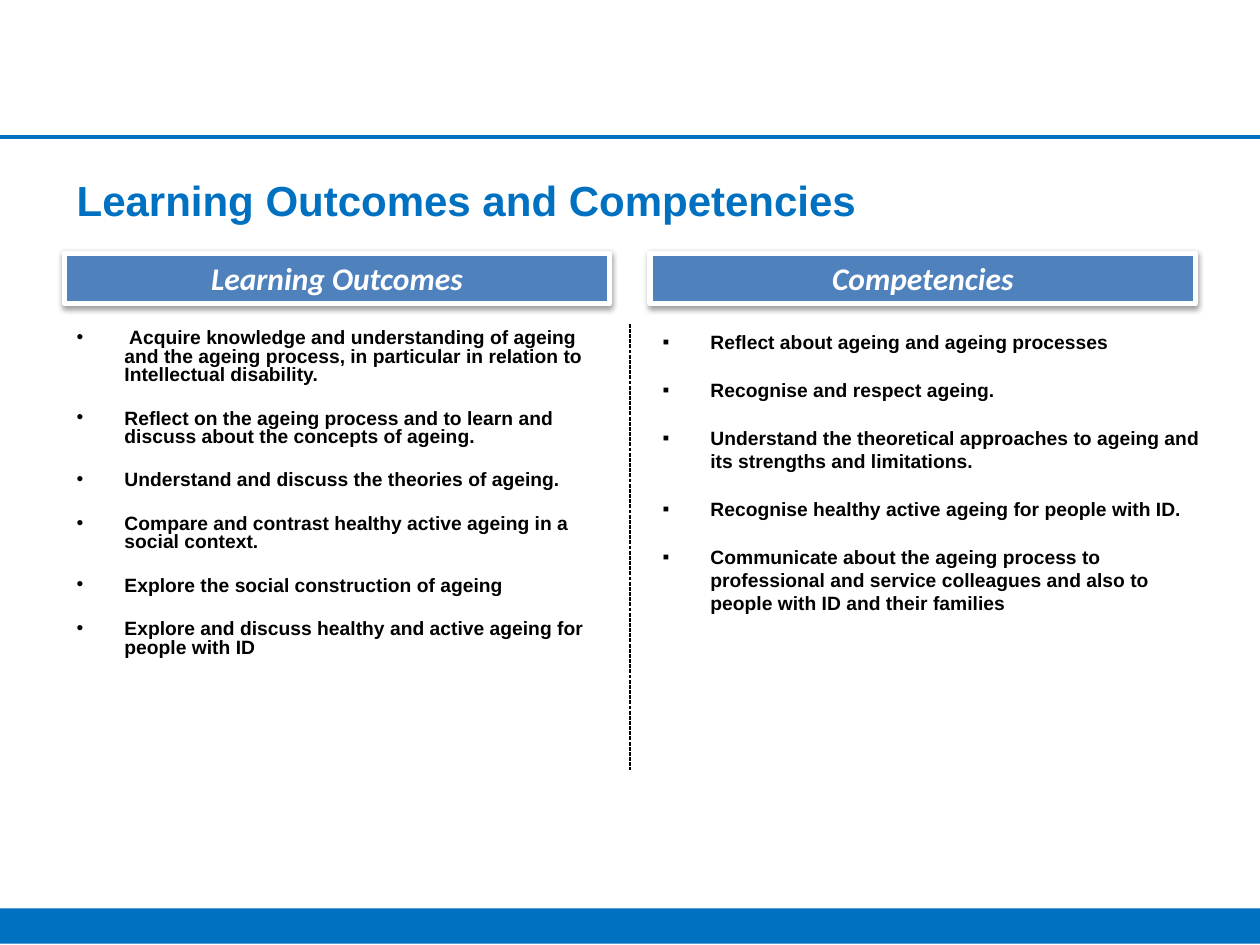
from lxml.etree import SubElement
from pptx import Presentation
from pptx.dml.color import RGBColor
from pptx.enum.dml import MSO_LINE
from pptx.enum.shapes import MSO_CONNECTOR, MSO_SHAPE
from pptx.enum.text import MSO_ANCHOR, PP_ALIGN
from pptx.oxml.ns import qn
from pptx.util import Inches, Pt

BLUE, STEEL, BLACK, WHITE = "0070C0", "4F81BD", "000000", "FFFFFF"
LEFT, RIGHT, WIDTH = 0.51, 5.16, 4.33
HEAD, BODY = 2.01, 2.57

OUTCOMES = [
    " Acquire knowledge and understanding of ageing and the ageing process, "
    "in particular in relation to Intellectual disability.",
    "Reflect on the ageing process and to learn and discuss about the concepts of ageing.",
    "Understand and discuss the theories of ageing.",
    "Compare and contrast healthy active ageing in a social context.",
    "Explore the social construction of ageing",
    "Explore and discuss healthy and active ageing for people with ID",
]
SKILLS = [
    "Reflect about ageing and ageing processes",
    "Recognise and respect ageing.",
    "Understand the theoretical approaches to ageing and its strengths and limitations.",
    "Recognise healthy active ageing for people with ID.",
    "Communicate about the ageing process to professional and service colleagues "
    "and also to people with ID and their families",
]


def color(code):
    return RGBColor.from_string(code)


def add_run(para, text, size, code, face="Arial", italic=False):
    run = para.add_run()
    run.text = text
    font = run.font
    font.name, font.size = face, Pt(size)
    font.bold, font.italic = True, italic
    font.color.rgb = color(code)


def add_bar(slide, left, top, width, height, fill):
    bar = slide.shapes.add_shape(
        MSO_SHAPE.RECTANGLE, Inches(left), Inches(top), Inches(width), Inches(height))
    bar.shadow.inherit = False
    bar.fill.solid()
    bar.fill.fore_color.rgb = color(fill)
    bar.line.fill.background()
    return bar


def add_rule(slide, x1, y1, x2, y2, code, weight):
    rule = slide.shapes.add_connector(
        MSO_CONNECTOR.STRAIGHT, Inches(x1), Inches(y1), Inches(x2), Inches(y2))
    rule.line.color.rgb = color(code)
    rule.line.width = Pt(weight)
    SubElement(rule._element.spPr, qn("a:effectLst"))
    return rule


def add_box(slide, left, top, width, height):
    box = slide.shapes.add_textbox(
        Inches(left), Inches(top), Inches(width), Inches(height))
    box.text_frame.word_wrap = True
    return box.text_frame


def add_shade(shape):
    """Give the shape a soft shadow straight below it."""
    effects = shape._element.spPr.find(qn("a:effectLst"))
    shade = SubElement(effects, qn("a:outerShdw"), blurRad=str(Pt(3.1)),
                       dist=str(Pt(1.6)), dir="5400000", rotWithShape="0")
    tint = SubElement(shade, qn("a:srgbClr"), val=BLACK)
    SubElement(tint, qn("a:alpha"), val="38000")


def add_head(slide, left, text):
    head = add_bar(slide, left, HEAD, WIDTH, 0.4, STEEL)
    head.line.color.rgb = color(WHITE)
    head.line.width = Pt(3)
    add_shade(head)
    para = head.text_frame.paragraphs[0]
    para.alignment = PP_ALIGN.CENTER
    add_run(para, text, 18, WHITE, "Calibri", True)


def add_list(slide, left, width, height, items, mark, spacing):
    frame = add_box(slide, left, BODY, width, height)
    for i, item in enumerate(items):
        para = frame.add_paragraph() if i else frame.paragraphs[0]
        props = para._p.get_or_add_pPr()
        props.set("marL", str(Inches(0.38)))
        props.set("indent", str(Inches(-0.38)))
        SubElement(props, qn("a:buFont"), typeface="Arial")
        SubElement(props, qn("a:buChar"), char=mark)
        para.line_spacing = spacing
        para.space_before = Pt(2.2 if i else 0)
        para.space_after = Pt(12)
        add_run(para, item, 11, BLACK)


def main():
    deck = Presentation()
    deck.slide_width, deck.slide_height = Inches(10), Inches(7.5)
    slide = deck.slides.add_slide(deck.slide_layouts[6])

    add_bar(slide, 0, 7.21, 10, 0.28, BLUE)
    add_rule(slide, 0, 1.09, 10, 1.09, BLUE, 2.25)

    title = add_box(slide, LEFT, 1.23, 8.98, 0.71)
    title.vertical_anchor = MSO_ANCHOR.MIDDLE
    add_run(title.paragraphs[0], "Learning Outcomes and Competencies", 24, BLUE)

    add_list(slide, LEFT, WIDTH, 3.54, OUTCOMES, "•", 0.8)
    add_list(slide, RIGHT, 4.49, 3.94, SKILLS, "▪", 1.0)
    add_head(slide, LEFT, "Learning Outcomes")
    add_head(slide, RIGHT, "Competencies")

    split = add_rule(slide, 5, BODY, 5, 6.11, BLACK, 0.75)
    split.line.dash_style = MSO_LINE.SQUARE_DOT

    deck.save("out.pptx")


if __name__ == "__main__":
    main()
